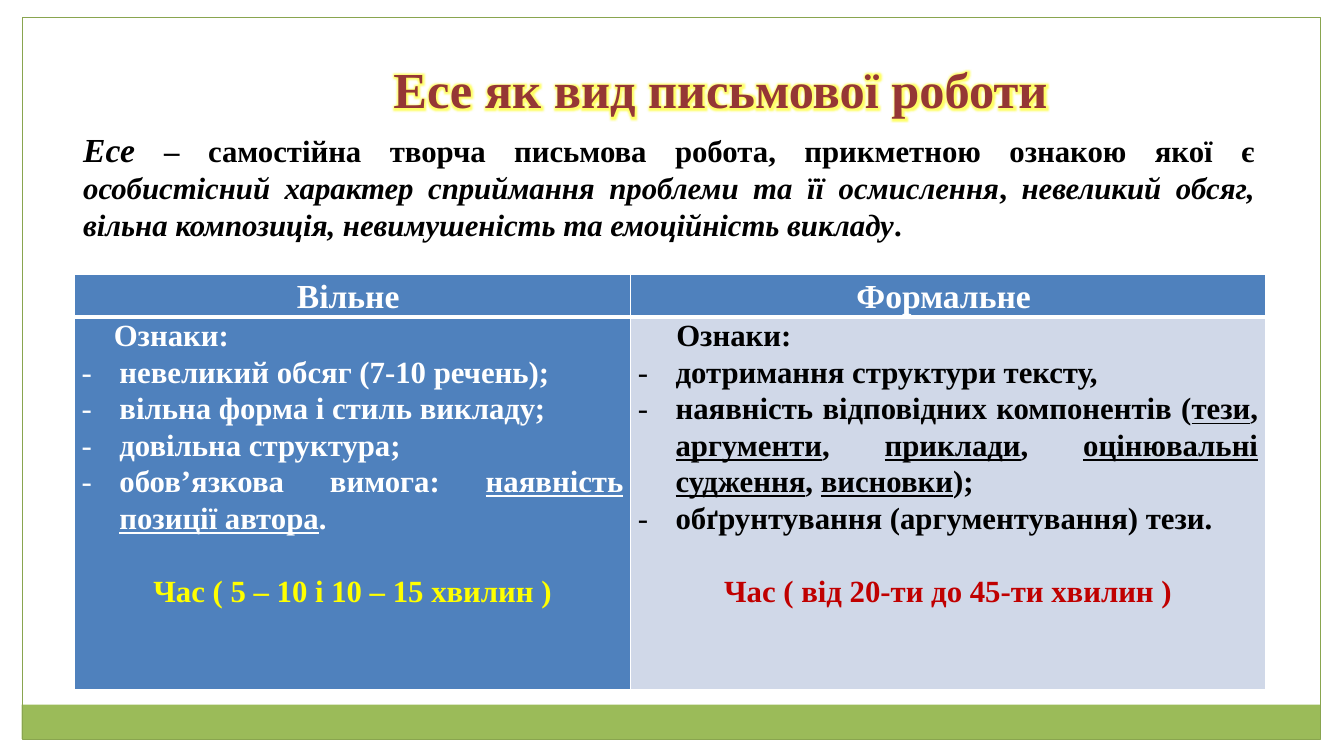
from lxml import etree
from pptx import Presentation
from pptx.dml.color import RGBColor
from pptx.enum.shapes import MSO_SHAPE
from pptx.enum.text import MSO_ANCHOR, MSO_AUTO_SIZE, PP_ALIGN
from pptx.oxml.ns import qn
from pptx.util import Pt

RECT = MSO_SHAPE.RECTANGLE
TOP, MIDDLE = MSO_ANCHOR.TOP, MSO_ANCHOR.MIDDLE
CENTER, JUSTIFY = PP_ALIGN.CENTER, PP_ALIGN.JUSTIFY
NO_FIT = MSO_AUTO_SIZE.NONE

WHITE = RGBColor(0xFF, 0xFF, 0xFF)
BLACK = RGBColor(0, 0, 0)
GREEN = RGBColor(0x9B, 0xBB, 0x59)
DARK_GREEN = RGBColor(0x89, 0xA5, 0x4F)
MAROON = RGBColor(0x95, 0x37, 0x35)
BLUE = RGBColor(0x4F, 0x81, 0xBD)
PALE_BLUE = RGBColor(0xD0, 0xD8, 0xE8)
YELLOW = RGBColor(0xFF, 0xFF, 0)
GLOW_YELLOW = RGBColor(0xFF, 0xFF, 0x66)
RED = RGBColor(0xC0, 0, 0)

FONT = "Times New Roman"
DEFINITION = (
    "_Есе _– самостійна творча письмова робота, прикметною ознакою якої є "
    "_особистісний характер сприймання проблеми та її осмислення_, "
    "_невеликий обсяг, вільна композиція, невимушеність та емоційність викладу_."
)
ESSAY_TYPES = [
    {
        "name": "Вільне ", "fill": BLUE, "color": WHITE, "indent": 23,
        "features": [
            "невеликий обсяг (7-10 речень);",
            "вільна форма і стиль викладу;",
            "довільна структура;",
            "обов’язкова вимога: _наявність позиції автора_.",
        ],
        "time": "Час ( 5 – 10 і 10 – 15 хвилин )", "time_color": YELLOW,
    },
    {
        "name": "Формальне ", "fill": PALE_BLUE, "color": BLACK, "indent": 27.5,
        "features": [
            "дотримання структури тексту, ",
            "наявність відповідних компонентів (_тези_, _аргументи_, _приклади_, "
            "_оцінювальні судження_, _висновки_);",
            "обґрунтування (аргументування) тези.",
        ],
        "time": "Час ( від 20-ти до 45-ти хвилин )", "time_color": RED,
    },
]


def add_runs(p, text, size, color, align, mark="underline"):
    p.alignment = align
    for i, part in enumerate(text.split("_")):
        if not part:
            continue
        r = p.add_run()
        r.text = part
        r.font.name, r.font.size, r.font.bold = FONT, Pt(size), True
        r.font.color.rgb = color
        if i % 2:
            setattr(r.font, mark, True)


def add_rect(s, left, top, width, height, fill=None, line=None):
    sp = s.shapes.add_shape(RECT, Pt(left), Pt(top), Pt(width), Pt(height))
    sp.shadow.inherit = False
    if fill is None:
        sp.fill.background()
    else:
        sp.fill.solid()
        sp.fill.fore_color.rgb = fill
    if line is None:
        sp.line.fill.background()
    else:
        sp.line.color.rgb = line
        sp.line.width = Pt(0.75)


def add_glow(r, color, radius):
    effects = etree.Element(qn("a:effectLst"))
    glow = etree.SubElement(effects, qn("a:glow"), rad=str(Pt(radius)))
    etree.SubElement(glow, qn("a:srgbClr"), val=str(color))
    r.font._element.find(qn("a:solidFill")).addnext(effects)


def set_title(s):
    sp = s.shapes.title
    sp.left, sp.top, sp.width, sp.height = Pt(271.4), Pt(38), Pt(486.7), Pt(51)
    sp.fill.solid()
    sp.fill.fore_color.rgb = WHITE
    tf = sp.text_frame
    tf.word_wrap = False
    tf.auto_size = NO_FIT
    tf.vertical_anchor = TOP
    p = tf.paragraphs[0]
    p.line_spacing = 1.0
    add_runs(p, "Есе як вид письмової роботи", 36, MAROON, CENTER)
    add_glow(p.runs[0], GLOW_YELLOW, 5)


def add_definition(s):
    sp = s.shapes.add_textbox(Pt(52.3), Pt(88.3), Pt(851), Pt(90))
    tf = sp.text_frame
    tf.word_wrap = True
    p = tf.paragraphs[0]
    add_runs(p, DEFINITION, 22, BLACK, JUSTIFY, "italic")
    p.runs[0].font.size = Pt(24)


def set_indent(p, left, first=0, bullet=None):
    pPr = p._p.get_or_add_pPr()
    pPr.set("marL", str(Pt(left)))
    pPr.set("indent", str(Pt(first)))
    if bullet:
        etree.SubElement(pPr, qn("a:buFont"), typeface=FONT)
        etree.SubElement(pPr, qn("a:buChar"), char=bullet)


def format_cell(cell, fill, anchor, bottom):
    cell.margin_left = cell.margin_right = Pt(5.2)
    cell.margin_top = cell.margin_bottom = 0
    cell.vertical_anchor = anchor
    tcPr = cell._tc.get_or_add_tcPr()
    for side, width in (("L", 1), ("R", 1), ("T", 1), ("B", bottom)):
        ln = etree.SubElement(tcPr, qn("a:ln" + side), w=str(Pt(width)))
        line_fill = etree.SubElement(ln, qn("a:solidFill"))
        etree.SubElement(line_fill, qn("a:srgbClr"), val=str(WHITE))
    cell.fill.solid()
    cell.fill.fore_color.rgb = fill


def fill_header(cell, essay):
    format_cell(cell, BLUE, MIDDLE, 3)
    p = cell.text_frame.paragraphs[0]
    p.line_spacing = 1.07
    add_runs(p, essay["name"], 24, WHITE, CENTER)


def fill_features(cell, essay):
    format_cell(cell, essay["fill"], TOP, 1)
    tf = cell.text_frame
    p = tf.paragraphs[0]
    p.line_spacing = 1.07
    set_indent(p, essay["indent"])
    add_runs(p, "Ознаки:", 22, essay["color"], JUSTIFY)
    for feature in essay["features"]:
        p = tf.add_paragraph()
        p.line_spacing = 1.07
        set_indent(p, 27, -27, "-")
        add_runs(p, feature, 22, essay["color"], JUSTIFY)
    p = tf.add_paragraph()
    p.line_spacing = 1.07
    p.space_before = Pt(26.2)
    add_runs(p, essay["time"], 22, essay["time_color"], CENTER)


def add_comparison(s):
    frame = s.shapes.add_table(2, 2, Pt(53.1), Pt(195.7), Pt(850.7), Pt(293.8))
    table = frame.table
    for col, width in zip(table.columns, (397.3, 453.4)):
        col.width = Pt(width)
    for row, height in zip(table.rows, (27.4, 266.4)):
        row.height = Pt(height)
    for i, essay in enumerate(ESSAY_TYPES):
        fill_header(table.cell(0, i), essay)
        fill_features(table.cell(1, i), essay)


def main():
    prs = Presentation()
    prs.slide_width, prs.slide_height = Pt(960), Pt(540)
    s = prs.slides.add_slide(prs.slide_layouts[5])
    add_rect(s, 15.5, 503.3, 927.4, 24.5, fill=GREEN)
    add_rect(s, 15.8, 12.2, 927.4, 515.9, line=DARK_GREEN)
    set_title(s)
    add_definition(s)
    add_comparison(s)
    prs.save("out.pptx")


if __name__ == "__main__":
    main()
